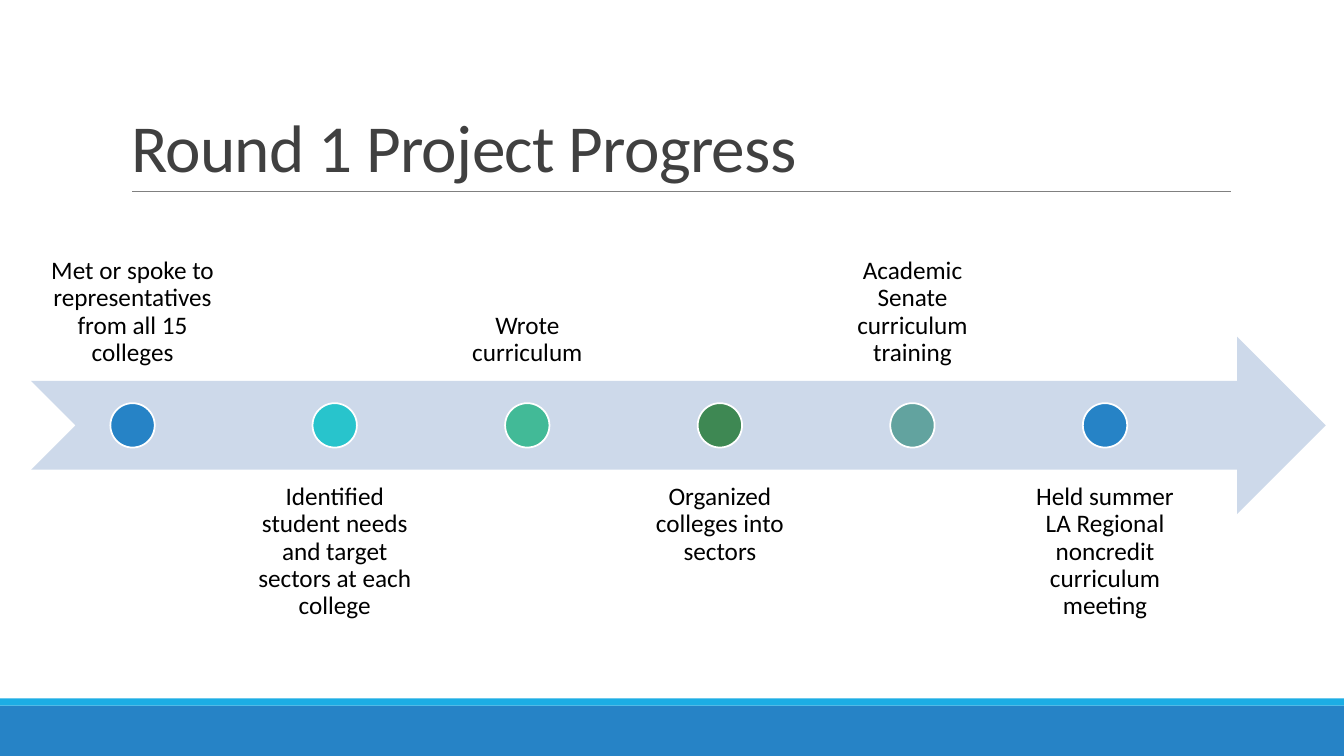
from dataclasses import dataclass

from lxml import etree
from pptx import Presentation
from pptx import util as u
from pptx.dml.color import RGBColor
from pptx.enum import shapes, text
from pptx.oxml.ns import qn


@dataclass(frozen=True)
class Theme:
    font: str = "Calibri"
    title_size: int = 48
    label_size: int = 18
    title: str = "404040"
    label: str = "000000"
    rule: str = "808080"
    band: str = "2683C6"
    stripe: str = "1CADE4"
    arrow: str = "CDD9EA"
    marker_line: str = "FFFFFF"


@dataclass(frozen=True)
class Milestone:
    label: str
    color: str
    width: float = 1.82


THEME = Theme()
MILESTONES = [
    Milestone("Met or spoke to representatives from all 15 colleges", "2683C6", 2.01),
    Milestone("Identified student needs and target sectors at each college", "28C4CC"),
    Milestone("Wrote curriculum", "42BA97"),
    Milestone("Organized colleges into sectors", "3E8853"),
    Milestone("Academic Senate curriculum training", "62A39F"),
    Milestone("Held summer LA Regional noncredit curriculum meeting", "2683C6"),
]
SLIDE_WIDTH, SLIDE_HEIGHT = 13.33, 7.5
TIMELINE_LEFT, TIMELINE_WIDTH = 0.31, 12.84
ROW_HEIGHT = 1.76
UPPER_TOP, ARROW_TOP, LOWER_TOP = 2.02, 3.34, 4.66
LABEL_GAP = 0.09
LABEL_INSET = 0.14
MARKER_SIZE = 0.44


def inches(*lengths: float) -> list[u.Length]:
    return [u.Inches(length) for length in lengths]


def add_filled_shape(slide, kind, left: float, top: float, width: float,
                     height: float, color: str):
    """Add a preset shape with a solid fill and neither line nor shadow."""
    shape = slide.shapes.add_shape(kind, *inches(left, top, width, height))
    shape.shadow.inherit = False
    shape.fill.solid()
    shape.fill.fore_color.rgb = RGBColor.from_string(color)
    shape.line.fill.background()
    return shape


def format_paragraph(paragraph, size: int, color: str, alignment, spacing: float) -> None:
    paragraph.alignment = alignment
    paragraph.line_spacing = spacing
    for run in paragraph.runs:
        run.font.name = THEME.font
        run.font.size = u.Pt(size)
        run.font.color.rgb = RGBColor.from_string(color)


def add_footer_bands(slide) -> None:
    rectangle = shapes.MSO_SHAPE.RECTANGLE
    add_filled_shape(slide, rectangle, 0, 7, SLIDE_WIDTH, 0.5, THEME.band)
    add_filled_shape(slide, rectangle, 0, 6.93, SLIDE_WIDTH, 0.07, THEME.stripe)


def add_title_rule(slide) -> None:
    rule = slide.shapes.add_connector(
        shapes.MSO_CONNECTOR.STRAIGHT, *inches(1.31, 1.9, 12.21, 1.9))
    rule.line.color.rgb = RGBColor.from_string(THEME.rule)
    rule.line.width = u.Pt(0.5)
    etree.SubElement(rule._element.spPr, qn("a:effectLst"))


def set_title(slide, wording: str) -> None:
    title = slide.shapes.title
    title.left, title.top, title.width, title.height = inches(1.2, 0.31, 11, 1.59)
    frame = title.text_frame
    frame.text = wording
    frame.vertical_anchor = text.MSO_ANCHOR.BOTTOM
    paragraph = frame.paragraphs[0]
    format_paragraph(paragraph, THEME.title_size, THEME.title, text.PP_ALIGN.LEFT, 0.85)
    paragraph.runs[0].font._element.set("spc", "-50")


def add_milestone(slide, milestone: Milestone, left: float, above: bool) -> None:
    """Add a label above or below the arrow and its marker on the arrow."""
    top = UPPER_TOP if above else LOWER_TOP
    label = slide.shapes.add_textbox(*inches(left, top, milestone.width, ROW_HEIGHT))
    frame = label.text_frame
    frame.word_wrap = True
    frame.margin_left = frame.margin_right = u.Inches(LABEL_INSET)
    frame.margin_top = frame.margin_bottom = u.Inches(LABEL_INSET)
    frame.vertical_anchor = text.MSO_ANCHOR.BOTTOM if above else text.MSO_ANCHOR.TOP
    frame.text = milestone.label
    format_paragraph(frame.paragraphs[0], THEME.label_size, THEME.label,
                     text.PP_ALIGN.CENTER, 0.9)

    marker = add_filled_shape(
        slide, shapes.MSO_SHAPE.OVAL,
        left + (milestone.width - MARKER_SIZE) / 2,
        ARROW_TOP + (ROW_HEIGHT - MARKER_SIZE) / 2,
        MARKER_SIZE, MARKER_SIZE, milestone.color)
    marker.line.color.rgb = RGBColor.from_string(THEME.marker_line)
    marker.line.width = u.Pt(1.25)


def add_timeline(slide, milestones: list[Milestone]) -> None:
    add_filled_shape(slide, shapes.MSO_SHAPE.NOTCHED_RIGHT_ARROW, TIMELINE_LEFT,
                     ARROW_TOP, TIMELINE_WIDTH, ROW_HEIGHT, THEME.arrow)
    left = TIMELINE_LEFT
    for index, milestone in enumerate(milestones):
        add_milestone(slide, milestone, left, above=index % 2 == 0)
        left += milestone.width + LABEL_GAP


def main() -> None:
    presentation = Presentation()
    presentation.slide_width, presentation.slide_height = inches(SLIDE_WIDTH, SLIDE_HEIGHT)
    slide = presentation.slides.add_slide(
        presentation.slide_layouts.get_by_name("Title Only"))
    add_footer_bands(slide)
    add_title_rule(slide)
    set_title(slide, "Round 1 Project Progress")
    add_timeline(slide, MILESTONES)
    presentation.save("out.pptx")


if __name__ == "__main__":
    main()
